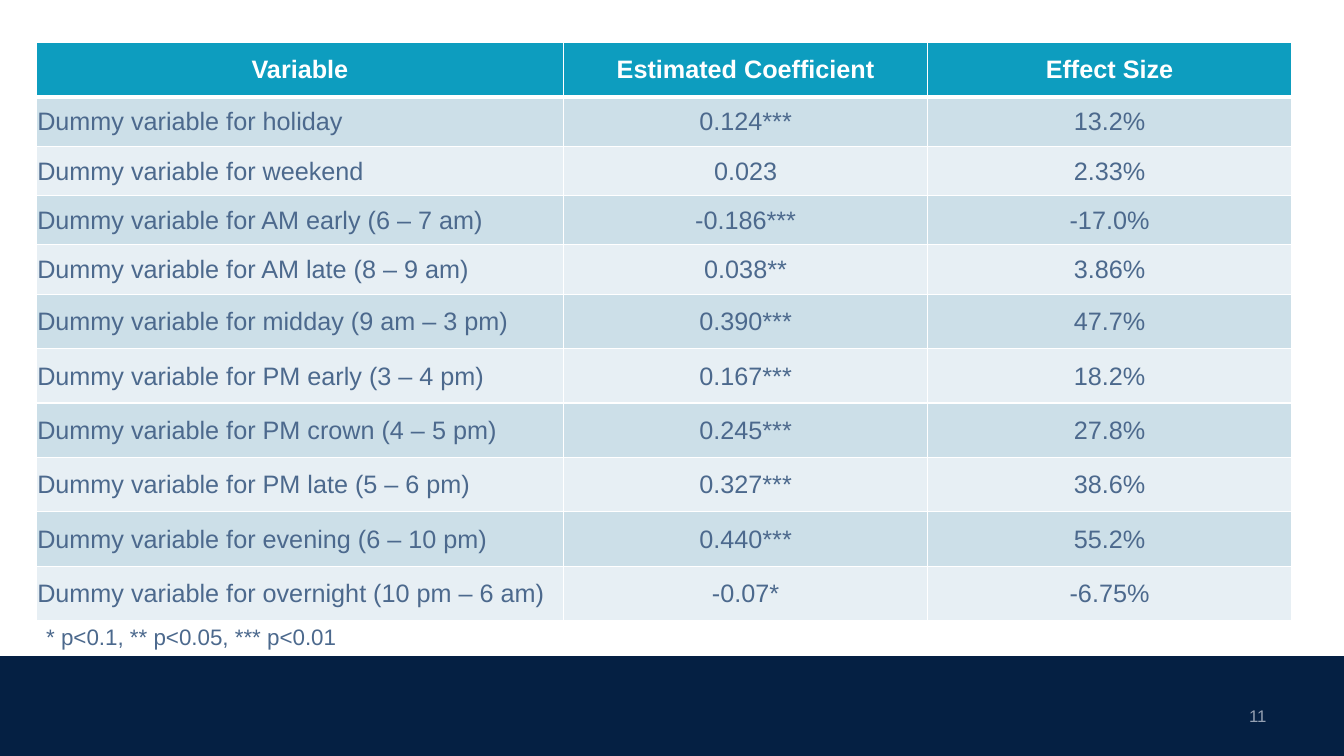
from dataclasses import dataclass

from lxml.etree import SubElement
from pptx import Presentation
from pptx.dml.color import RGBColor
from pptx.enum.shapes import MSO_SHAPE
from pptx.enum.text import MSO_ANCHOR, PP_ALIGN
from pptx.oxml.ns import qn
from pptx.slide import Slide
from pptx.table import Table, _Cell
from pptx.text.text import TextFrame
from pptx.util import Inches, Pt

FONT = "Arial"
WHITE, NAVY, TEAL, SLATE, GREY = "FFFFFF", "052043", "0D9DBF", "4C698D", "96A1B3"
BANDS = ("CCDFE8", "E7EFF4")
HEADINGS = ("Variable", "Estimated Coefficient", "Effect Size")
COLUMN_WIDTHS = (5.23, 3.61, 3.61)
TALL_ROW, SHORT_ROW = 0.54, 0.49


@dataclass(frozen=True)
class Estimate:
    """One dummy variable with its coefficient and effect size."""

    condition: str
    coefficient: str
    effect: str
    height: float = TALL_ROW

    def texts(self) -> tuple[str, str, str]:
        """Return the three cell texts of the row."""
        return f"Dummy variable for {self.condition}", self.coefficient, self.effect


ESTIMATES = (
    Estimate("holiday", "0.124***", "13.2%", SHORT_ROW),
    Estimate("weekend", "0.023", "2.33%", SHORT_ROW),
    Estimate("AM early (6 – 7 am)", "-0.186***", "-17.0%", SHORT_ROW),
    Estimate("AM late (8 – 9 am)", "0.038**", "3.86%", SHORT_ROW),
    Estimate("midday (9 am – 3 pm)", "0.390***", "47.7%"),
    Estimate("PM early (3 – 4 pm)", "0.167***", "18.2%"),
    Estimate("PM crown (4 – 5 pm)", "0.245***", "27.8%"),
    Estimate("PM late (5 – 6 pm)", "0.327***", "38.6%"),
    Estimate("evening (6 – 10 pm)", "0.440***", "55.2%"),
    Estimate("overnight (10 pm – 6 am)", "-0.07*", "-6.75%"),
)


def color(value: str) -> RGBColor:
    """Turn a hex string into a colour."""
    return RGBColor.from_string(value)


def write(frame: TextFrame, text: str, size: float, ink: str,
          alignment: PP_ALIGN = PP_ALIGN.LEFT, bold: bool = False) -> None:
    """Write one formatted run into a text frame."""
    paragraph = frame.paragraphs[0]
    paragraph.alignment = alignment
    run = paragraph.add_run()
    run.text = text
    run.font.name = FONT
    run.font.size = Pt(size)
    run.font.bold = bold
    run.font.color.rgb = color(ink)


def add_borders(cell: _Cell, bottom: float) -> None:
    """Draw white borders around a cell."""
    properties = cell._tc.get_or_add_tcPr()
    for side, width in (("L", 1), ("R", 1), ("T", 1), ("B", bottom)):
        line = SubElement(properties, qn(f"a:ln{side}"), w=str(Pt(width)))
        fill = SubElement(line, qn("a:solidFill"))
        SubElement(fill, qn("a:srgbClr"), val=WHITE)


def paint_cell(cell: _Cell, fill: str, bottom: float = 1) -> None:
    """Set the borders, fill and anchor of a cell."""
    add_borders(cell, bottom)
    cell.fill.solid()
    cell.fill.fore_color.rgb = color(fill)
    cell.vertical_anchor = MSO_ANCHOR.MIDDLE


def fill_header(table: Table) -> None:
    """Fill the heading row."""
    for column, heading in enumerate(HEADINGS):
        cell = table.cell(0, column)
        paint_cell(cell, TEAL, 3)
        write(cell.text_frame, heading, 18, WHITE, PP_ALIGN.CENTER, True)


def fill_estimate(table: Table, row: int, estimate: Estimate) -> None:
    """Fill one banded row of estimates."""
    for column, text in enumerate(estimate.texts()):
        cell = table.cell(row, column)
        paint_cell(cell, BANDS[(row - 1) % 2])
        cell.margin_left = cell.margin_right = cell.margin_top = Inches(0.01)
        cell.margin_bottom = Inches(0)
        write(cell.text_frame, text, 18, SLATE,
              PP_ALIGN.CENTER if column else PP_ALIGN.LEFT)


def add_estimates(slide: Slide) -> None:
    """Add the table of estimates."""
    heights = (TALL_ROW, *(estimate.height for estimate in ESTIMATES))
    table = slide.shapes.add_table(
        len(heights), len(HEADINGS), Inches(0.36), Inches(0.42),
        Inches(sum(COLUMN_WIDTHS)), Inches(sum(heights))).table
    for column, width in zip(table.columns, COLUMN_WIDTHS):
        column.width = Inches(width)
    for row, height in zip(table.rows, heights):
        row.height = Inches(height)
    fill_header(table)
    for row, estimate in enumerate(ESTIMATES, start=1):
        fill_estimate(table, row, estimate)


def add_footer(slide: Slide) -> None:
    """Add the footer band and the slide number."""
    band = slide.shapes.add_shape(
        MSO_SHAPE.RECTANGLE, Inches(0), Inches(6.51), Inches(13.33), Inches(0.99))
    band.shadow.inherit = False
    band.fill.solid()
    band.fill.fore_color.rgb = color(NAVY)
    band.line.fill.background()
    number = slide.shapes.add_textbox(
        Inches(11.65), Inches(6.9), Inches(1.01), Inches(0.4)).text_frame
    number.word_wrap = True
    number.vertical_anchor = MSO_ANCHOR.MIDDLE
    write(number, "11", 12, GREY, PP_ALIGN.RIGHT)


def add_legend(slide: Slide) -> None:
    """Add the legend of significance levels."""
    legend = slide.shapes.add_textbox(
        Inches(0.36), Inches(6.13), Inches(3.12), Inches(0.64)).text_frame
    legend.word_wrap = False
    write(legend, "* p<0.1, ** p<0.05, *** p<0.01", 16, SLATE)


def main() -> None:
    """Build and save the presentation."""
    presentation = Presentation()
    presentation.slide_width = Inches(13.33)
    presentation.slide_height = Inches(7.5)
    slide = presentation.slides.add_slide(presentation.slide_layouts[6])
    add_footer(slide)
    add_estimates(slide)
    add_legend(slide)
    presentation.save("out.pptx")


if __name__ == "__main__":
    main()
